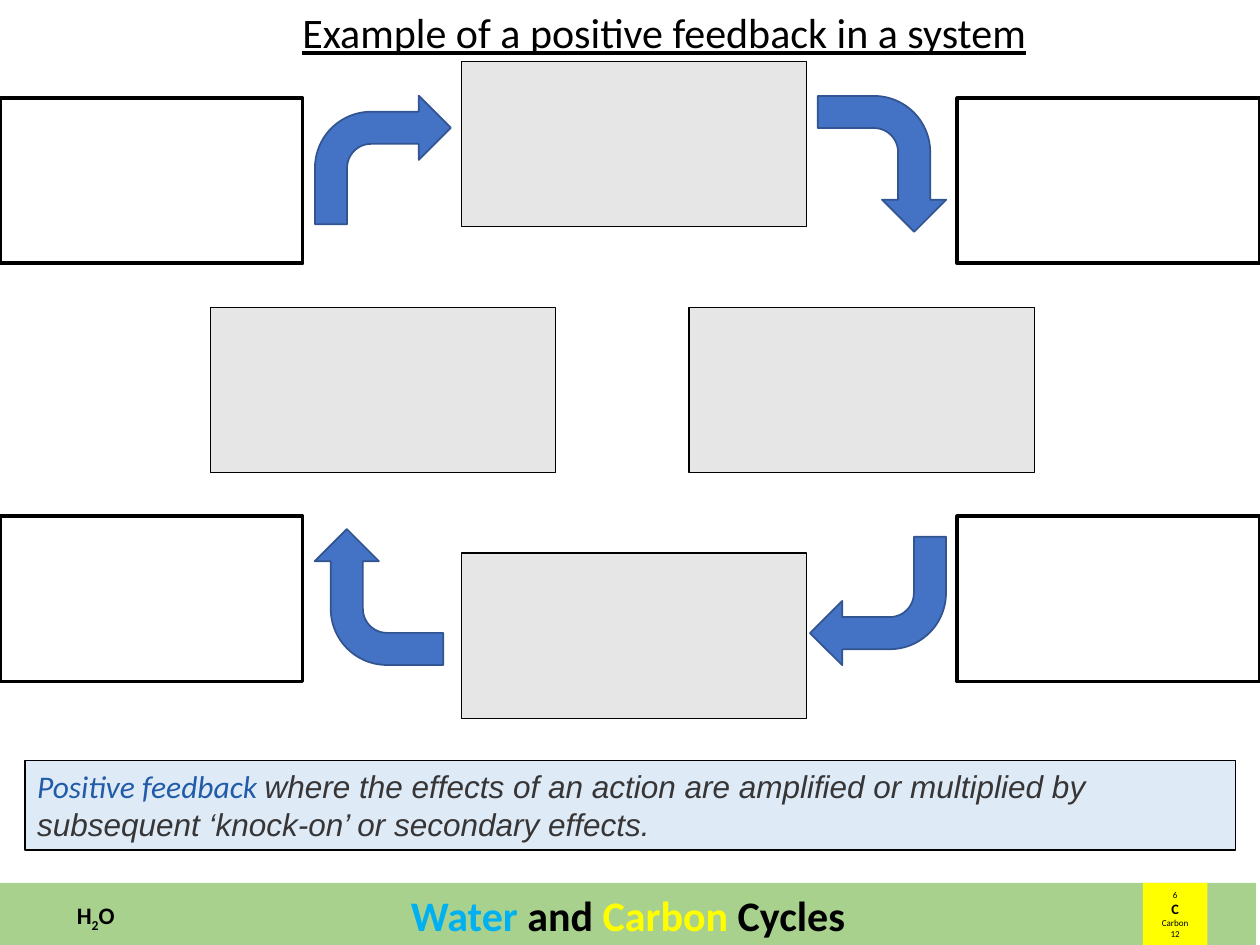
from pptx import Presentation
from pptx.dml.color import RGBColor
from pptx.enum.shapes import MSO_SHAPE as Shape
from pptx.enum.text import MSO_ANCHOR as Anchor, PP_ALIGN as Align
from pptx.util import Cm, Pt

COLORS = {
    "black": "000000", "white": "FFFFFF", "grey": "E7E6E6", "green": "A9D18E",
    "yellow": "FFFF00", "water": "00B0F0", "arrow": "4472C4", "arrow edge": "325491",
    "pale blue": "DEEBF7", "term": "225CA8", "definition": "373536",
}
BOX_HEIGHT = 3.33


def color(name):
    return RGBColor.from_string(COLORS[name])


def add_shape(slide, kind, box, fill, line=None, width=1):
    """Box is left, top, width and height in centimetres."""
    shape = slide.shapes.add_shape(kind, *map(Cm, box))
    shape.shadow.inherit = False
    shape.fill.solid()
    shape.fill.fore_color.rgb = color(fill)
    if line:
        shape.line.color.rgb = color(line)
        shape.line.width = Pt(width)
    else:
        shape.line.fill.background()
    return shape


def add_run(paragraph, text, size, ink="black", **formats):
    run = paragraph.add_run()
    run.text = text
    run.font.size = Pt(size)
    run.font.color.rgb = color(ink)
    for name, value in {"name": "Calibri", **formats}.items():
        setattr(run.font, name, value)
    return run


def place_title(slide, box):
    title = slide.shapes.title
    for name, value in zip(("left", "top", "width", "height"), box):
        setattr(title, name, Cm(value))
    frame = title.text_frame
    frame.word_wrap = False
    frame.vertical_anchor = Anchor.TOP
    paragraph = frame.paragraphs[0]
    paragraph.alignment = Align.LEFT
    paragraph.line_spacing = 1.0
    add_run(paragraph, "Example of a positive feedback in a system", 24, underline=True)


def draw_cycle(slide, box):
    """Four outlined corner boxes, four grey boxes and the arrows between them."""
    left, top, width, height = box
    grey_width, corner_width, inset = 6.96, 6.1, 0.74
    last_top = height - BOX_HEIGHT
    middle = last_top / 2

    for x, y in ((9.3, 0), (4.24, middle), (13.89, middle), (9.3, last_top)):
        add_shape(slide, Shape.RECTANGLE, (left + x, top + y, grey_width, BOX_HEIGHT),
                  "grey", "black", 0.75)
    for x in (0, width - corner_width):
        for y in (inset, last_top - inset):
            add_shape(slide, Shape.RECTANGLE, (left + x, top + y, corner_width, BOX_HEIGHT),
                      "white", "black", 2.25)
    arrows = ((6.35, 0.69), (16.41, 0.77), (16.33, 9.58), (6.27, 9.5))
    for turn, (x, y) in enumerate(arrows):
        arrow = add_shape(slide, Shape.BENT_ARROW, (left + x, top + y, 2.74, 2.59),
                          "arrow", "arrow edge")
        arrow.rotation = 90 * turn


def draw_definition(slide, box):
    panel = add_shape(slide, Shape.RECTANGLE, box, "pale blue", "black")
    paragraph = panel.text_frame.paragraphs[0]
    paragraph.alignment = Align.LEFT
    add_run(paragraph, "Positive feedback ", 18, "term", italic=True)
    add_run(paragraph, "where the effects of an action are amplified or multiplied by "
            "subsequent ‘knock-on’ or secondary effects.", 18, "definition",
            italic=True, name="Arial")


def draw_footer(slide, box):
    left, top, width, height = box
    band = add_shape(slide, Shape.RECTANGLE, box, "green")
    paragraph = band.text_frame.paragraphs[0]
    paragraph.alignment = Align.CENTER
    for text, ink in (("Water", "water"), (" and ", "black"),
                      ("Carbon", "yellow"), (" Cycles", "black")):
        add_run(paragraph, text, 24, ink, bold=True)

    element = add_shape(slide, Shape.RECTANGLE, (left + 23.04, top, 1.3, height), "yellow")
    frame = element.text_frame
    for index, (text, size) in enumerate((("6", 5.2), ("C", 8.2), ("Carbon", 5.2), ("12", 5.2))):
        paragraph = frame.add_paragraph() if index else frame.paragraphs[0]
        paragraph.alignment = Align.CENTER
        add_run(paragraph, text, size, bold=text == "C")

    formula = slide.shapes.add_textbox(Cm(left + 1.3), Cm(top + 0.23), Cm(1.32), Cm(0.84))
    formula.text_frame.word_wrap = False
    for text in "H2O":
        run = add_run(formula.text_frame.paragraphs[0], text, 13.5, bold=True)
        if text.isdigit():
            run.font._element.set("baseline", "-25000")


def main():
    presentation = Presentation()
    presentation.slide_width, presentation.slide_height = Cm(25.4), Cm(19.05)
    slide = presentation.slides.add_slide(presentation.slide_layouts[5])
    draw_footer(slide, (0, 17.8, 25.32, 1.27))
    place_title(slide, (5.84, 0, 15.24, 1.27))
    draw_cycle(slide, (0, 1.24, 25.4, 13.24))
    draw_definition(slide, (0.5, 15.33, 24.41, 1.8))
    presentation.save("out.pptx")


if __name__ == "__main__":
    main()
